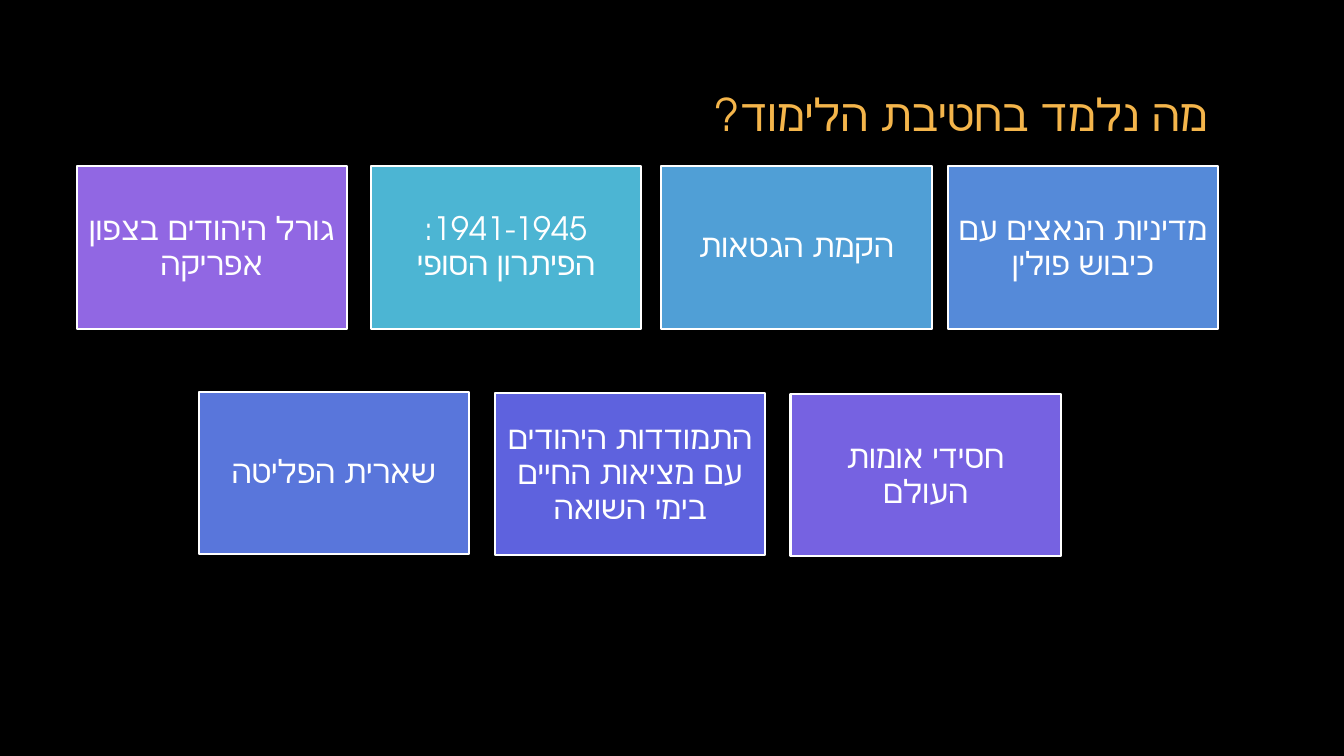
from dataclasses import dataclass

from pptx import Presentation
from pptx.dml.color import RGBColor
from pptx.enum.shapes import MSO_SHAPE
from pptx.enum.text import MSO_ANCHOR, PP_ALIGN
from pptx.oxml.ns import qn
from pptx.slide import Slide
from pptx.text.text import TextFrame
from pptx.util import Emu, Pt

PX = 9144  # 100 px to the inch


@dataclass(frozen=True)
class Theme:
    background: str = "000000"
    title: str = "F4B54B"
    white: str = "FFFFFF"
    font: str = "TeX Gyre Adventor"
    title_pt: int = 32
    card_pt: int = 23
    line_pt: float = 1.5


@dataclass(frozen=True)
class Card:
    text: str
    x: int
    y: int
    fill: str


THEME = Theme()
CARD_W, CARD_H, CARD_INSET = 268, 161, 10
TOP_ROW = 165
CARDS = [
    Card("1941-1945: הפיתרון הסופי", 368, TOP_ROW, "4CB5D3"),
    Card("הקמת הגטאות", 656, TOP_ROW, "509FD6"),
    Card("מדיניות הנאצים עם כיבוש פולין", 940, TOP_ROW, "558AD9"),
    Card("שארית הפליטה", 197, 389, "5976DB"),
    Card("התמודדות היהודים עם מציאות החיים בימי השואה", 491, 390, "5E62DE"),
    Card("חסידי אומות העולם", 784, 391, "7662E1"),
    Card("גורל היהודים בצפון אפריקה", 76, TOP_ROW, "9167E3"),
]


def px(n: int) -> Emu:
    return Emu(n * PX)


def rgb(color: str) -> RGBColor:
    return RGBColor.from_string(color)


def set_rtl_text(tf: TextFrame, text: str, size: int, color: str, align: PP_ALIGN) -> None:
    """Fill the frame with one right-to-left paragraph, centred vertically."""
    tf.text = text
    tf.word_wrap = True
    tf.vertical_anchor = MSO_ANCHOR.MIDDLE
    p = tf.paragraphs[0]
    p.alignment = align
    p.line_spacing = 0.9
    p._p.get_or_add_pPr().set("rtl", "1")
    r = p.runs[0]
    r.font.size = Pt(size)
    r.font.name = THEME.font
    r.font.color.rgb = rgb(color)
    # Hebrew takes its face from the complex-script font
    cs = r._r.get_or_add_rPr().makeelement(qn("a:cs"), {"typeface": THEME.font})
    r._r.rPr.append(cs)


def add_title(s: Slide, text: str) -> None:
    box = s.shapes.add_textbox(px(125), px(67), px(1083), px(99))
    set_rtl_text(box.text_frame, text, THEME.title_pt, THEME.title, PP_ALIGN.RIGHT)


def add_card(s: Slide, card: Card) -> None:
    sp = s.shapes.add_shape(
        MSO_SHAPE.RECTANGLE, px(card.x), px(card.y), px(CARD_W), px(CARD_H)
    )
    sp.shadow.inherit = False
    sp.fill.solid()
    sp.fill.fore_color.rgb = rgb(card.fill)
    sp.line.color.rgb = rgb(THEME.white)
    sp.line.width = Pt(THEME.line_pt)
    tf = sp.text_frame
    tf.margin_left = tf.margin_right = tf.margin_top = tf.margin_bottom = px(CARD_INSET)
    set_rtl_text(tf, card.text, THEME.card_pt, THEME.white, PP_ALIGN.CENTER)


def main() -> None:
    prs = Presentation()
    prs.slide_width, prs.slide_height = px(1333), px(750)
    s = prs.slides.add_slide(prs.slide_layouts[6])
    s.background.fill.solid()
    s.background.fill.fore_color.rgb = rgb(THEME.background)
    add_title(s, "מה נלמד בחטיבת הלימוד?")
    for card in CARDS:
        add_card(s, card)
    prs.save("out.pptx")


if __name__ == "__main__":
    main()
